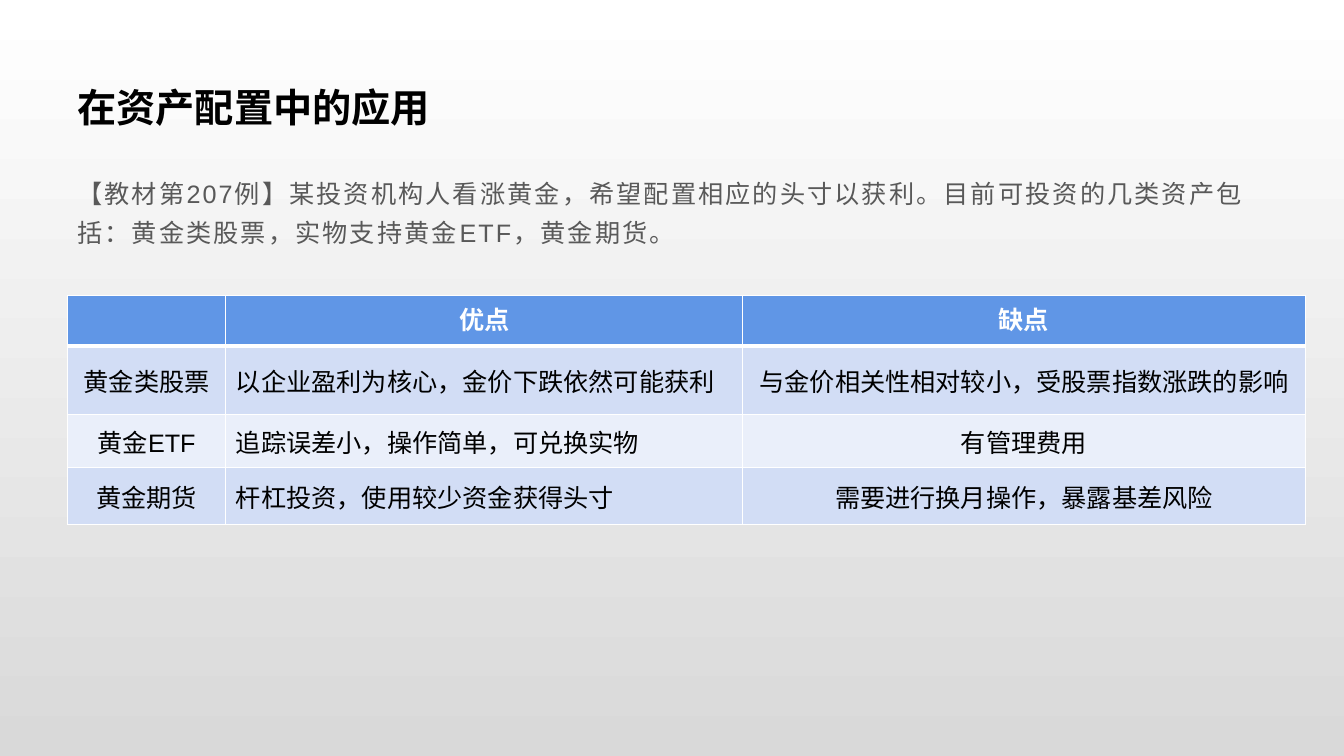
import pptx
import pptx.dml.color
import pptx.enum.lang
import pptx.enum.text
import pptx.util
from lxml import etree
from pptx.oxml.ns import qn

Cm = pptx.util.Cm
RGBColor = pptx.dml.color.RGBColor
ALIGN = pptx.enum.text.PP_ALIGN
ANCHOR = pptx.enum.text.MSO_ANCHOR

WHITE = RGBColor(0xFF, 0xFF, 0xFF)
BLACK = RGBColor(0x00, 0x00, 0x00)
SILVER = RGBColor(0xD9, 0xD9, 0xD9)
GREY = RGBColor(0x59, 0x59, 0x59)
BLUE = RGBColor(0x60, 0x96, 0xE6)
BANDS = [RGBColor(0xEA, 0xEF, 0xFA), RGBColor(0xD2, 0xDD, 0xF5)]

LEFT = Cm(1.7)
WIDTH = Cm(30.48)


def write(frame, text, size, color, bold=False, align=ALIGN.LEFT):
    frame.text = text
    para = frame.paragraphs[0]
    para.alignment = align
    for run in para.runs:
        run.font.name = "Arial"
        run.font.size = pptx.util.Pt(size)
        run.font.bold = bold
        run.font.color.rgb = color
        run.font.language_id = pptx.enum.lang.MSO_LANGUAGE_ID.SIMPLIFIED_CHINESE
    return para


def edge(cell, side, points):
    """Draw a white border on one side (L, R, T or B) of a cell."""
    line = etree.SubElement(cell._tc.get_or_add_tcPr(), qn("a:ln" + side))
    line.set("w", str(pptx.util.Pt(points)))
    fill = etree.SubElement(line, qn("a:solidFill"))
    etree.SubElement(fill, qn("a:srgbClr")).set("val", str(WHITE))


deck = pptx.Presentation()
deck.slide_width = Cm(33.87)
deck.slide_height = Cm(19.05)
slide = deck.slides.add_slide(deck.slide_layouts[5])

# Background
back = slide.background.fill
back.gradient()
back.gradient_angle = 270
for stop, color in zip(back.gradient_stops, [WHITE, SILVER]):
    stop.color.rgb = color

# Title
title = slide.shapes.title
title.left, title.top, title.width, title.height = LEFT, Cm(1.7), WIDTH, Cm(1.96)
title.text_frame.auto_size = pptx.enum.text.MSO_AUTO_SIZE.NONE
title.text_frame.vertical_anchor = ANCHOR.MIDDLE
write(title.text_frame, "在资产配置中的应用", 28, BLACK, bold=True)

# Example
body = slide.shapes.add_textbox(LEFT, Cm(4.14), WIDTH, Cm(13.21))
body.text_frame.word_wrap = True
para = write(
    body.text_frame,
    "【教材第207例】某投资机构人看涨黄金，希望配置相应的头寸以获利。"
    "目前可投资的几类资产包括：黄金类股票，实物支持黄金ETF，黄金期货。",
    18, GREY)
para.line_spacing = 1.3
para.space_after = pptx.util.Pt(10)
para.runs[0].font._element.set("spc", "150")

# Table of pros and cons
ROWS = [
    ["", "优点", "缺点"],
    ["黄金类股票", "以企业盈利为核心，金价下跌依然可能获利",
     "与金价相关性相对较小，受股票指数涨跌的影响"],
    ["黄金ETF", "追踪误差小，操作简单，可兑换实物", "有管理费用"],
    ["黄金期货", "杆杠投资，使用较少资金获得头寸", "需要进行换月操作，暴露基差风险"],
]
WIDTHS = [3.99, 13.03, 14.17]
HEIGHTS = [1.27, 1.73, 1.35, 1.42]
table = slide.shapes.add_table(len(ROWS), len(WIDTHS), LEFT, Cm(7.44),
                               Cm(sum(WIDTHS)), Cm(sum(HEIGHTS))).table
for column, width in zip(table.columns, WIDTHS):
    column.width = Cm(width)
for row, height in zip(table.rows, HEIGHTS):
    row.height = Cm(height)

for r, texts in enumerate(ROWS):
    head = r == 0
    for c, text in enumerate(texts):
        cell = table.cell(r, c)
        for side in "LRTB":
            thick = (head and side == "B") or (r == 1 and side == "T")
            edge(cell, side, 3 if thick else 1)
        cell.fill.solid()
        cell.fill.fore_color.rgb = BLUE if head else BANDS[r % 2]
        cell.vertical_anchor = ANCHOR.TOP if head else ANCHOR.MIDDLE
        write(cell.text_frame, text, 18, WHITE if head else BLACK, bold=head,
              align=ALIGN.LEFT if c == 1 and not head else ALIGN.CENTER)

deck.save("out.pptx")
